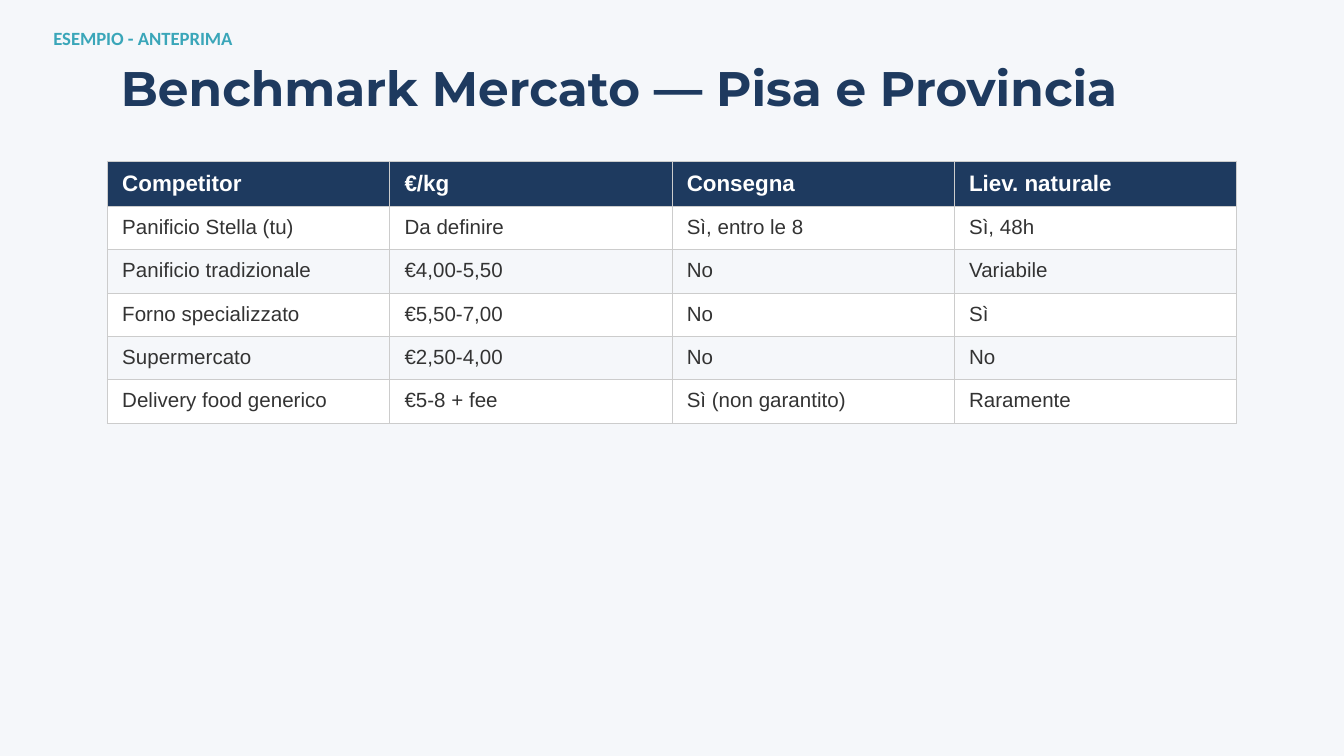
"""Build the market benchmark slide with its competitor table."""
from lxml import etree
from pptx import Presentation
from pptx.dml.color import RGBColor
from pptx.enum import text
from pptx.oxml import ns
from pptx.util import Cm, Pt

NAVY = RGBColor(0x1E, 0x3A, 0x5F)
TEAL = RGBColor(0x3A, 0xA6, 0xB9)
MIST = RGBColor(0xF5, 0xF7, 0xFA)
WHITE = RGBColor(0xFF, 0xFF, 0xFF)
CHARCOAL = RGBColor(0x33, 0x33, 0x33)
GREY = RGBColor(0xCC, 0xCC, 0xCC)

TITLE_FORMAT = {"name": "Montserrat", "size": Pt(26), "bold": True, "color": NAVY}
TAG_FORMAT = {"name": "Calibri", "size": Pt(10), "bold": True, "color": TEAL}
HEADER_FORMAT = {"name": "Arial", "size": Pt(12), "bold": True, "color": WHITE}
BODY_FORMAT = {"name": "Arial", "size": Pt(11), "bold": False, "color": CHARCOAL}
CELL_MARGINS = {
    "margin_left": Cm(0.28),
    "margin_right": Cm(0.28),
    "margin_top": Cm(0.18),
    "margin_bottom": Cm(0.18),
}

LEFT, WIDTH = Cm(2.03), Cm(21.34)
HEADER_HEIGHT, ROW_HEIGHT = Cm(0.85), Cm(0.82)
ROWS = [
    ("Competitor", "€/kg", "Consegna", "Liev. naturale"),
    ("Panificio Stella (tu)", "Da definire", "Sì, entro le 8", "Sì, 48h"),
    ("Panificio tradizionale", "€4,00-5,50", "No", "Variabile"),
    ("Forno specializzato", "€5,50-7,00", "No", "Sì"),
    ("Supermercato", "€2,50-4,00", "No", "No"),
    ("Delivery food generico", "€5-8 + fee", "Sì (non garantito)", "Raramente"),
]


def set_attributes(target, values):
    """Set each named value on the target."""
    for name, value in values.items():
        setattr(target, name, value)


def write_text(frame, words, font_format):
    """Write one formatted, left-aligned paragraph into a text frame."""
    paragraph = frame.paragraphs[0]
    paragraph.alignment = text.PP_ALIGN.LEFT
    span = paragraph.add_run()
    span.text = words
    for name, value in font_format.items():
        if name == "color":
            span.font.color.rgb = value
        else:
            setattr(span.font, name, value)


def add_borders(cell):
    """Give a cell thin grey lines on all four sides."""
    properties = cell._tc.get_or_add_tcPr()
    for side in ("lnL", "lnR", "lnT", "lnB"):
        line = etree.SubElement(properties, ns.qn(f"a:{side}"), w=str(Pt(0.5)))
        fill = etree.SubElement(line, ns.qn("a:solidFill"))
        etree.SubElement(fill, ns.qn("a:srgbClr"), val=str(GREY))


def fill_cell(cell, words, color, font_format):
    """Write, border and colour one table cell."""
    set_attributes(cell, CELL_MARGINS)
    write_text(cell.text_frame, words, font_format)
    add_borders(cell)
    cell.fill.solid()
    cell.fill.fore_color.rgb = color


def add_title(page, words):
    """Place and format the title placeholder."""
    title = page.shapes.title
    set_attributes(title, {"left": LEFT, "top": Cm(0.76),
                           "width": WIDTH, "height": Cm(1.78)})
    set_attributes(title.text_frame, {
        "word_wrap": True,
        "auto_size": text.MSO_AUTO_SIZE.NONE,
        "vertical_anchor": text.MSO_ANCHOR.MIDDLE,
    })
    write_text(title.text_frame, words, TITLE_FORMAT)


def add_benchmark_table(page):
    """Add the competitor table with alternating row colours."""
    height = HEADER_HEIGHT + ROW_HEIGHT * (len(ROWS) - 1)
    table = page.shapes.add_table(
        len(ROWS), len(ROWS[0]), LEFT, Cm(3.05), WIDTH, height).table
    for index, row in enumerate(ROWS):
        header = index == 0
        table.rows[index].height = HEADER_HEIGHT if header else ROW_HEIGHT
        color = NAVY if header else (MIST, WHITE)[index % 2]
        font_format = HEADER_FORMAT if header else BODY_FORMAT
        for column, words in enumerate(row):
            fill_cell(table.cell(index, column), words, color, font_format)


def add_tag(page, words):
    """Add the small preview tag in the top left corner."""
    box = page.shapes.add_textbox(Cm(0.76), Cm(0.38), Cm(7.62), Cm(0.89))
    set_attributes(box.text_frame, {
        "word_wrap": False,
        "auto_size": text.MSO_AUTO_SIZE.SHAPE_TO_FIT_TEXT,
    })
    write_text(box.text_frame, words, TAG_FORMAT)


def main():
    """Build and save the deck."""
    deck = Presentation()
    set_attributes(deck, {"slide_width": Cm(25.4), "slide_height": Cm(14.29)})
    page = deck.slides.add_slide(deck.slide_layouts.get_by_name("Title Only"))
    page.background.fill.solid()
    page.background.fill.fore_color.rgb = MIST
    add_title(page, "Benchmark Mercato — Pisa e Provincia")
    add_benchmark_table(page)
    add_tag(page, "ESEMPIO - ANTEPRIMA")
    deck.save("out.pptx")


if __name__ == "__main__":
    main()
